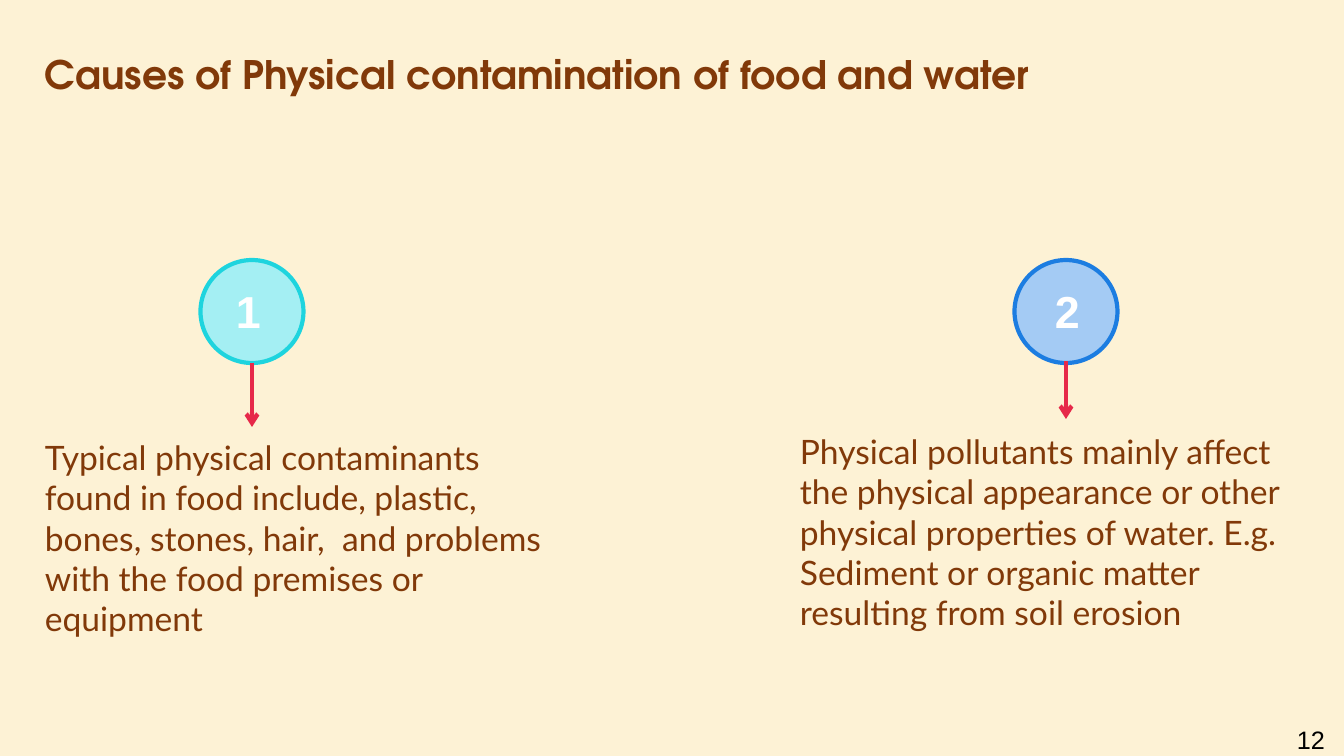
"""Builds a slide on the causes of physical contamination of food and water."""
from lxml import etree
from pptx import Presentation
from pptx.dml.color import RGBColor
from pptx.enum.shapes import MSO_CONNECTOR, MSO_SHAPE
from pptx.enum.text import MSO_ANCHOR
from pptx.oxml.ns import qn
from pptx.util import Pt

CREAM = RGBColor(0xFD, 0xF2, 0xD5)
BROWN = RGBColor(0x81, 0x39, 0x09)
RED = RGBColor(0xE6, 0x29, 0x49)
WHITE = RGBColor(0xFF, 0xFF, 0xFF)
BLACK = RGBColor(0x00, 0x00, 0x00)
AQUA, TEAL = RGBColor(0xA4, 0xEF, 0xF3), RGBColor(0x1E, 0xD4, 0xDE)
SKY, BLUE = RGBColor(0xA4, 0xCB, 0xF4), RGBColor(0x1C, 0x7D, 0xE1)

TITLE = "Causes of Physical contamination of food and water"
PAGE = "12"
CAUSES = [
    {"number": "1", "fill": AQUA, "line": TEAL, "center": 252,
     "number_left": 226, "arrow": (363, 427), "box": (35, 432, 539, 214),
     "text": "Typical physical contaminants found in food include, plastic, "
             "bones, stones, hair,  and problems with the food premises or "
             "equipment"},
    {"number": "2", "fill": SKY, "line": BLUE, "center": 1066,
     "number_left": 1045, "arrow": (361, 419), "box": (790, 426, 512, 254),
     "text": "Physical pollutants mainly affect the physical appearance or "
             "other physical properties of water. E.g. Sediment or organic "
             "matter resulting from soil erosion"},
]
CIRCLE_TOP, CIRCLE_SIZE = 260, 103
NUMBER_TOP, NUMBER_W, NUMBER_H = 279, 40, 65


def px(n):
    return round(n * 914400 / 100.8)


def add_text(s, box, text, size, font, color, bold=False):
    sp = s.shapes.add_textbox(*map(px, box))
    tf = sp.text_frame
    tf.word_wrap = True
    p = tf.paragraphs[0]
    r = p.add_run()
    r.text = text
    r.font.size = Pt(size)
    r.font.name = font
    r.font.bold = bold
    r.font.color.rgb = color
    return sp


def add_circle(s, cause):
    left = cause["center"] - CIRCLE_SIZE / 2
    sp = s.shapes.add_shape(MSO_SHAPE.OVAL, px(left), px(CIRCLE_TOP),
                            px(CIRCLE_SIZE), px(CIRCLE_SIZE))
    sp.shadow.inherit = False
    sp.fill.solid()
    sp.fill.fore_color.rgb = cause["fill"]
    sp.line.color.rgb = cause["line"]
    sp.line.width = Pt(3)


def add_arrow(s, x, top, bottom):
    cxn = s.shapes.add_connector(MSO_CONNECTOR.STRAIGHT,
                                 px(x), px(top), px(x), px(bottom))
    cxn.line.color.rgb = RED
    cxn.line.width = Pt(3)
    ln = cxn.line._get_or_add_ln()
    etree.SubElement(ln, qn("a:tailEnd"), type="arrow")
    etree.SubElement(cxn._element.spPr, qn("a:effectLst"))


def main():
    prs = Presentation()
    prs.slide_width, prs.slide_height = px(1344), px(756)
    s = prs.slides.add_slide(prs.slide_layouts[6])
    s.background.fill.solid()
    s.background.fill.fore_color.rgb = CREAM

    title = add_text(s, (35, 37, 1276, 80), TITLE, 28, "TeX Gyre Adventor",
                     BROWN, True)
    title.fill.solid()
    title.fill.fore_color.rgb = CREAM
    title.text_frame.vertical_anchor = MSO_ANCHOR.MIDDLE
    title.text_frame.paragraphs[0].line_spacing = 0.9

    for cause in CAUSES:
        add_circle(s, cause)
        add_arrow(s, cause["center"], *cause["arrow"])
        add_text(s, cause["box"], cause["text"], 24, "Lato", BROWN)
        add_text(s, (cause["number_left"], NUMBER_TOP, NUMBER_W, NUMBER_H),
                 cause["number"], 32, "Arial", WHITE, True)

    add_text(s, (1287, 719, 56, 40), PAGE, 18, "Arial", BLACK)
    prs.save("out.pptx")


if __name__ == "__main__":
    main()
